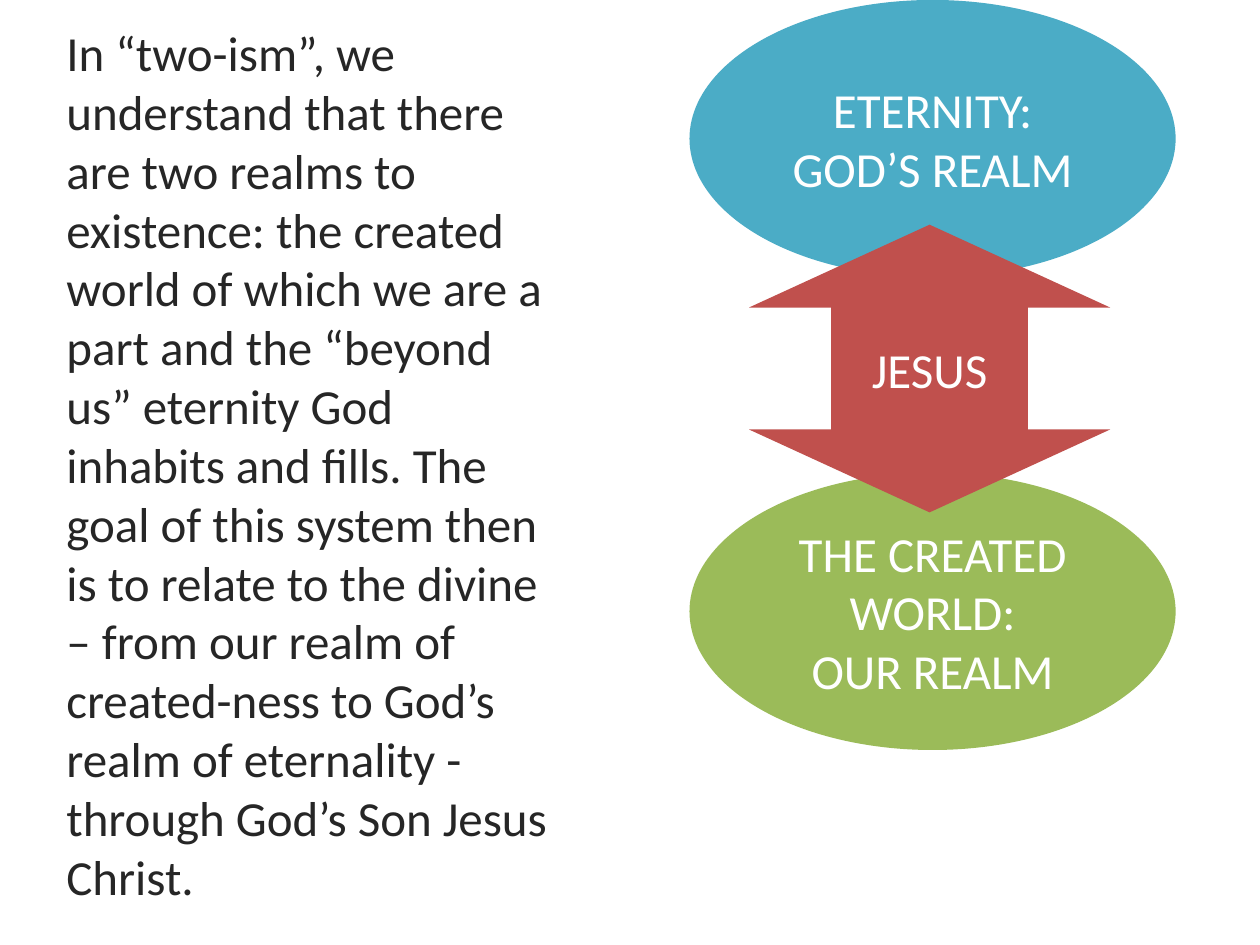
import lxml.etree
import pptx
import pptx.dml.color
import pptx.enum.shapes
import pptx.enum.text
import pptx.oxml.ns
import pptx.util

Cm = pptx.util.Cm
Shape = pptx.enum.shapes.MSO_SHAPE
Align = pptx.enum.text.PP_ALIGN
Anchor = pptx.enum.text.MSO_ANCHOR
qn = pptx.oxml.ns.qn

COLOURS = {
    "white": "FFFFFF",
    "text": "262626",
    "eternity": "4BACC6",
    "world": "9BBB59",
    "jesus": "C0504D",
}


def colour(name):
    return pptx.dml.color.RGBColor.from_string(COLOURS[name])


def write(shape, lines, ink, align):
    frame = shape.text_frame
    frame.word_wrap = True
    frame.text = "\n".join(lines)
    for paragraph in frame.paragraphs:
        paragraph.alignment = align
        paragraph.font.name = "Calibri"
        paragraph.font.size = pptx.util.Pt(28)
        paragraph.font.color.rgb = colour(ink)


deck = pptx.Presentation()
deck.slide_width = Cm(25.4)
deck.slide_height = Cm(19.05)
page = deck.slides.add_slide(deck.slide_layouts[6])

# Explanation on the left
explanation = page.shapes.add_textbox(Cm(1.09), Cm(0.33), Cm(10.22), Cm(18.21))
explanation.fill.solid()
explanation.fill.fore_color.rgb = colour("white")
write(explanation, [
    "In “two-ism”, we understand that there are two realms to existence: "
    "the created world of which we are a part and the “beyond us” eternity "
    "God inhabits and fills. The goal of this system then is to relate to "
    "the divine – from our realm of created-ness to God’s realm of "
    "eternality - through God’s Son Jesus Christ."
], "text", Align.LEFT)

# Two realms, with the arrow joining them on top
realm = (Cm(13.9), Cm(9.8), Cm(5.59))
diagram = [
    (Shape.OVAL, "eternity", Cm(0), realm, ["ETERNITY: GOD’S REALM"]),
    (Shape.OVAL, "world", Cm(9.53), realm, ["THE CREATED WORLD:", "OUR REALM"]),
    (Shape.UP_DOWN_ARROW, "jesus", Cm(4.53), (Cm(15.1), Cm(7.28), Cm(5.8)), ["JESUS"]),
]
for kind, fill, top, (left, width, height), lines in diagram:
    shape = page.shapes.add_shape(kind, left, top, width, height)
    shape.shadow.inherit = False
    shape.fill.solid()
    shape.fill.fore_color.rgb = colour(fill)
    shape.line.fill.background()
    shape.text_frame.vertical_anchor = Anchor.MIDDLE
    write(shape, lines, "white", Align.CENTER)

# Shaft width (adj1) and head length (adj2) of the arrow, set by guide name
arrow = shape
guides = arrow._element.spPr.find(qn("a:prstGeom")).find(qn("a:avLst"))
for guide in list(guides):
    guides.remove(guide)
for name, value in (("adj1", 54500), ("adj2", 28800)):
    lxml.etree.SubElement(guides, qn("a:gd"), name=name, fmla=f"val {value}")

deck.save("out.pptx")
